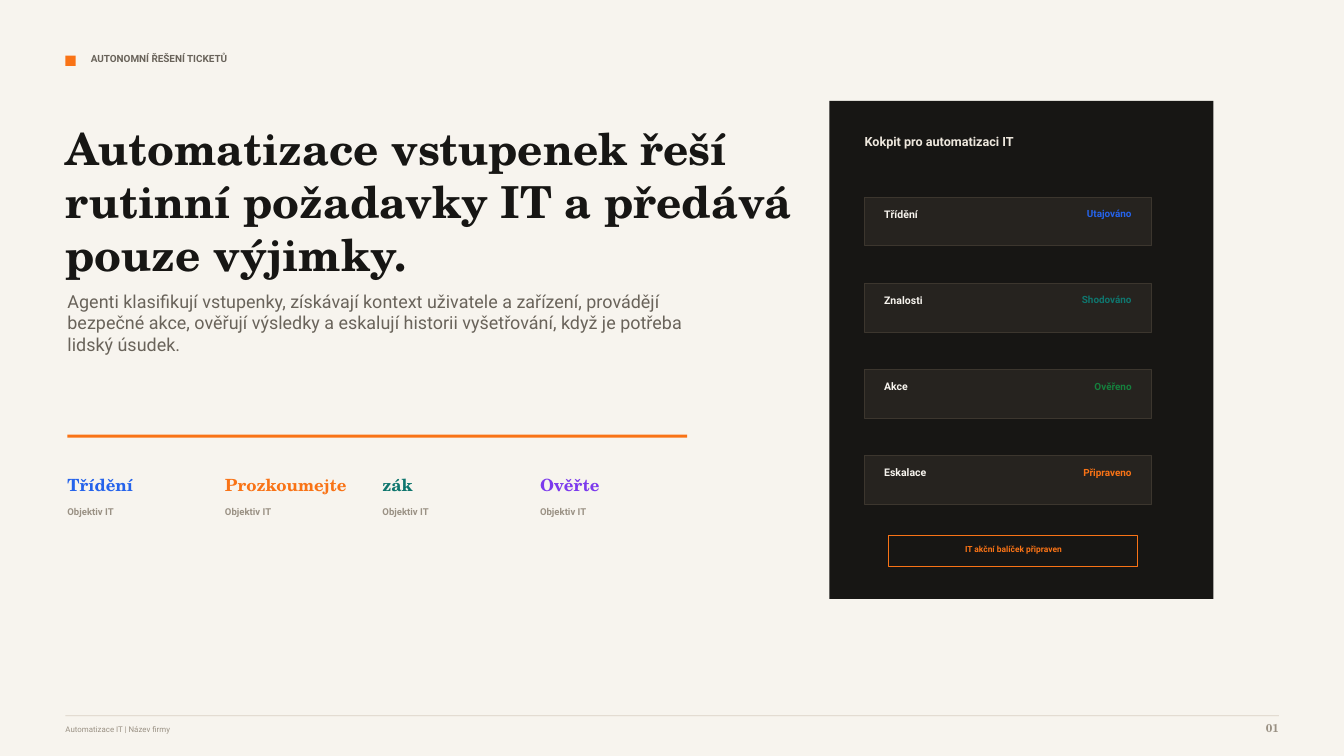
"""Build the title slide on automated IT ticket handling."""
from typing import NamedTuple, Optional

from pptx import Presentation
from pptx import util as u
from pptx.dml.color import RGBColor
from pptx.enum import shapes, text

SANS, SERIF = "Roboto", "TeX Gyre Schola"
PAPER, INK, GREY, MUTED = "F7F4EE", "171614", "69635A", "9A9184"
ORANGE, BLUE, TEAL, GREEN, VIOLET = "F97316", "2563EB", "0F766E", "15803D", "7C3AED"
LEFT, CENTER, RIGHT = text.PP_ALIGN.LEFT, text.PP_ALIGN.CENTER, text.PP_ALIGN.RIGHT


class Box(NamedTuple):
    left: float
    top: float
    width: float
    height: float


class Stage(NamedTuple):
    name: str
    color: str


class CockpitRow(NamedTuple):
    task: str
    status: str
    color: str


STAGES = [
    Stage("Třídění", BLUE),
    Stage("Prozkoumejte", ORANGE),
    Stage("zák", TEAL),
    Stage("Ověřte", VIOLET),
]
COCKPIT_ROWS = [
    CockpitRow("Třídění", "Utajováno", BLUE),
    CockpitRow("Znalosti", "Shodováno", TEAL),
    CockpitRow("Akce", "Ověřeno", GREEN),
    CockpitRow("Eskalace", "Připraveno", ORANGE),
]
STAGE_LEFT, STAGE_STEP = 1.7, 3.97
ROW_TOP, ROW_STEP = 4.98, 2.17


def paint(color_format, value: str) -> None:
    color_format.rgb = RGBColor.from_string(value)


def place(shape, box: Box) -> None:
    shape.left, shape.top, shape.width, shape.height = (u.Cm(length) for length in box)


def write(slide, box: Box, words: str, *, size: float, color: str, font: str = SANS,
          bold: bool = True, align=LEFT, holder=None) -> None:
    holder = holder or slide.shapes.add_textbox(0, 0, 0, 0)
    place(holder, box)
    frame = holder.text_frame
    frame.word_wrap = True
    frame.auto_size = text.MSO_AUTO_SIZE.NONE
    frame.vertical_anchor = text.MSO_ANCHOR.TOP
    frame.margin_left = frame.margin_top = frame.margin_right = frame.margin_bottom = 0
    paragraph = frame.paragraphs[0]
    paragraph.alignment = align
    run = paragraph.add_run()
    run.text = words
    run.font.name, run.font.size, run.font.bold = font, u.Pt(size), bold
    paint(run.font.color, color)


def draw_rect(slide, box: Box, fill: Optional[str] = None, line: Optional[str] = None) -> None:
    rect = slide.shapes.add_shape(shapes.MSO_SHAPE.RECTANGLE, 0, 0, 0, 0)
    place(rect, box)
    rect.shadow.inherit = False
    if fill:
        rect.fill.solid()
        paint(rect.fill.fore_color, fill)
    else:
        rect.fill.background()
    if line:
        paint(rect.line.color, line)
        rect.line.width = u.Pt(0.75)
    else:
        rect.line.fill.background()


def draw_intro(slide) -> None:
    draw_rect(slide, Box(1.65, 1.4, 0.26, 0.26), ORANGE)
    write(slide, Box(2.29, 1.32, 16.41, 0.48), "AUTONOMNÍ ŘEŠENÍ TICKETŮ", size=7.1, color=GREY)
    write(slide, Box(1.65, 3.07, 19.58, 3.33),
          "Automatizace vstupenek řeší rutinní požadavky IT a předává pouze výjimky.",
          size=31.5, color=INK, font=SERIF, holder=slide.shapes.title)
    write(slide, Box(1.7, 7.32, 16.41, 2.34),
          "Agenti klasifikují vstupenky, získávají kontext uživatele a zařízení, "
          "provádějí bezpečné akce, ověřují výsledky a eskalují historii vyšetřování, "
          "když je potřeba lidský úsudek.", size=12.8, color=GREY, bold=False)
    draw_rect(slide, Box(STAGE_LEFT, 10.95, 15.62, 0.08), ORANGE)


def draw_stage(slide, index: int, stage: Stage) -> None:
    left = STAGE_LEFT + index * STAGE_STEP
    write(slide, Box(left, 11.96, 3.18, 0.53), stage.name, size=12, color=stage.color, font=SERIF)
    write(slide, Box(left, 12.75, 2.92, 0.43), "Objektiv IT", size=6.8, color=MUTED)


def draw_cockpit_row(slide, index: int, row: CockpitRow) -> None:
    top = ROW_TOP + index * ROW_STEP
    draw_rect(slide, Box(21.79, top, 7.24, 1.22), "26231F", "3C362E")
    write(slide, Box(22.28, top + 0.26, 3.43, 0.43), row.task, size=7.5, color=PAPER)
    write(slide, Box(25.98, top + 0.26, 2.54, 0.43), row.status, size=7.1,
          color=row.color, align=RIGHT)


def draw_cockpit(slide) -> None:
    draw_rect(slide, Box(20.9, 2.54, 9.68, 12.55), INK)
    write(slide, Box(21.79, 3.38, 5.82, 0.64), "Kokpit pro automatizaci IT", size=9, color="EDE7DD")
    for index, row in enumerate(COCKPIT_ROWS):
        draw_cockpit_row(slide, index, row)
    draw_rect(slide, Box(22.38, 13.49, 6.3, 0.79), line=ORANGE)
    write(slide, Box(22.71, 13.72, 5.66, 0.36), "IT akční balíček připraven", size=6,
          color=ORANGE, align=CENTER)


def draw_footer(slide) -> None:
    draw_rect(slide, Box(1.65, 18.03, 30.58, 0.02), "D9D0C3")
    write(slide, Box(1.65, 18.26, 20.12, 0.38), "Automatizace IT | Název firmy", size=5.6,
          color=MUTED, bold=False)
    write(slide, Box(30.96, 18.16, 1.27, 0.48), "01", size=8.2, color=MUTED, font=SERIF,
          align=RIGHT)


def main() -> None:
    deck = Presentation()
    deck.slide_width, deck.slide_height = u.Cm(33.87), u.Cm(19.05)
    slide = deck.slides.add_slide(deck.slide_layouts[5])
    slide.background.fill.solid()
    paint(slide.background.fill.fore_color, PAPER)
    draw_intro(slide)
    for index, stage in enumerate(STAGES):
        draw_stage(slide, index, stage)
    draw_cockpit(slide)
    draw_footer(slide)
    deck.save("out.pptx")


if __name__ == "__main__":
    main()
